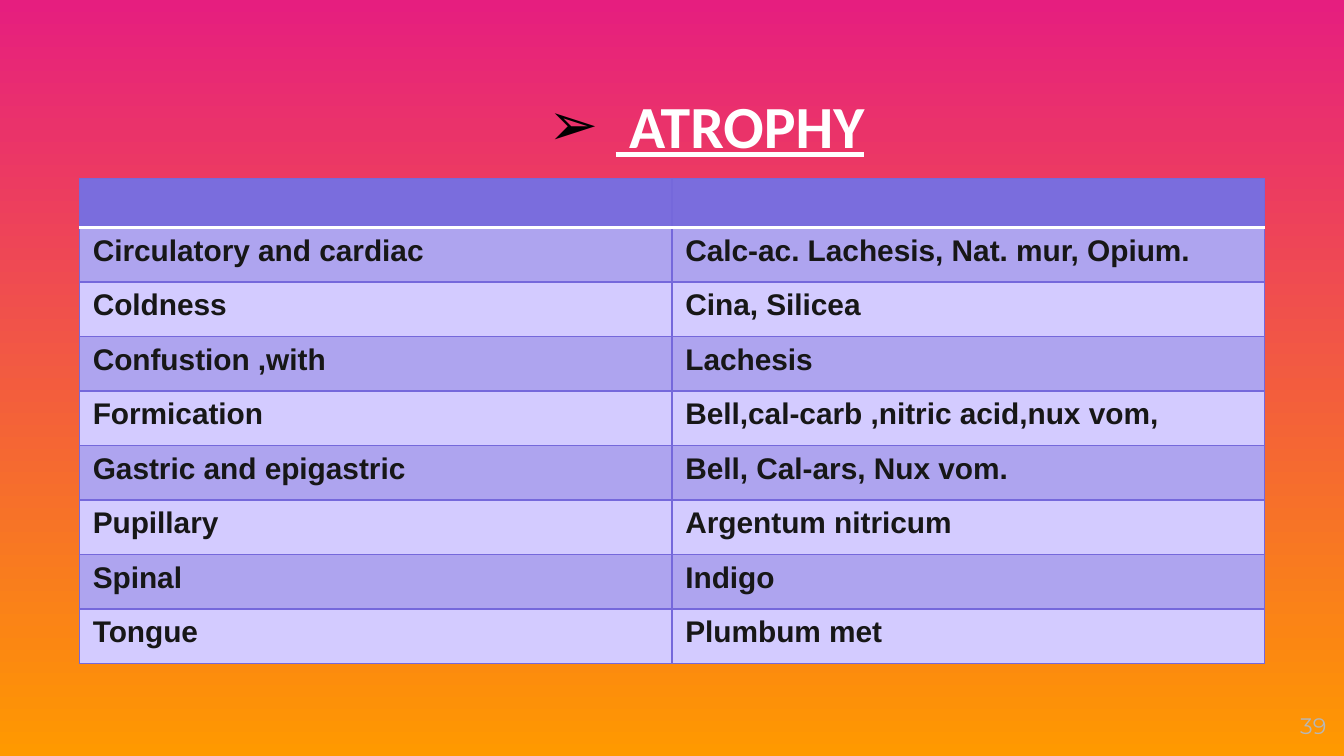
from lxml import etree
from pptx import Presentation
from pptx.dml.color import RGBColor
from pptx.enum import text
from pptx.oxml import ns
from pptx.util import Cm, Pt

PINK = RGBColor(0xE6, 0x1E, 0x7F)
ORANGE = RGBColor(0xFF, 0x99, 0x00)
WHITE = RGBColor(0xFF, 0xFF, 0xFF)
BLACK = RGBColor(0x00, 0x00, 0x00)
INK = RGBColor(0x17, 0x17, 0x17)
GREY = RGBColor(0xB7, 0xB7, 0xB7)
HEADER = RGBColor(0x7A, 0x6D, 0xDD)
BAND_DARK = RGBColor(0xAE, 0xA4, 0xEF)
BAND_LIGHT = RGBColor(0xD3, 0xCB, 0xFF)
GRID = RGBColor(0x75, 0x68, 0xDB)

REMEDIES = [
    ("Circulatory and cardiac", "Calc-ac. Lachesis, Nat. mur, Opium."),
    ("Coldness", "Cina, Silicea"),
    ("Confustion ,with", "Lachesis"),
    ("Formication", "Bell,cal-carb ,nitric acid,nux vom,"),
    ("Gastric and epigastric", "Bell, Cal-ars, Nux vom."),
    ("Pupillary", "Argentum nitricum"),
    ("Spinal", "Indigo"),
    ("Tongue", "Plumbum met"),
]


def add_child(parent, tag, **attributes):
    child = etree.SubElement(parent, ns.qn(tag))
    for name, value in attributes.items():
        child.set(name, str(value))
    return child


def format_font(font, name, size, color, bold=False):
    font.name = name
    font.size = Pt(size)
    font.color.rgb = color
    font.bold = bold


def paint_background(slide):
    fill = slide.background.fill
    fill.gradient()
    fill.gradient_angle = 270
    for stop, color in zip(fill.gradient_stops, (PINK, ORANGE)):
        stop.color.rgb = color


def add_title(slide, wording):
    title = slide.shapes.title
    title.left, title.top, title.width, title.height = Cm(10.11), Cm(1.55), Cm(6.63), Cm(1.63)
    frame = title.text_frame
    frame.text = wording
    frame.word_wrap = False
    frame.vertical_anchor = text.MSO_ANCHOR.TOP
    paragraph = frame.paragraphs[0]
    paragraph.alignment = text.PP_ALIGN.LEFT
    properties = paragraph._p.get_or_add_pPr()
    properties.set("marL", str(Cm(1.27)))
    properties.set("indent", str(Cm(-1.27)))
    add_child(add_child(properties, "a:buClr"), "a:srgbClr", val=BLACK)
    add_child(properties, "a:buFont", typeface="Arial")
    add_child(properties, "a:buChar", char="➢")
    font = paragraph.runs[0].font
    format_font(font, "Calibri", 32, WHITE, bold=True)
    font.underline = True


def set_borders(cell, **special):
    """Draw the grid line on each side, or the (colour, points) given for lnL, lnR, lnT or lnB."""
    properties = cell._tc.get_or_add_tcPr()
    for position, side in enumerate(("lnL", "lnR", "lnT", "lnB")):
        color, points = special.get(side, (GRID, 0.75))
        line = add_child(properties, f"a:{side}", w=Pt(points))
        add_child(add_child(line, "a:solidFill"), "a:srgbClr", val=color)
        properties.insert(position, line)


def fill_cell(cell, color):
    cell.fill.solid()
    cell.fill.fore_color.rgb = color


def add_remedy_table(slide):
    frame = slide.shapes.add_table(len(REMEDIES) + 1, 2, Cm(1.5), Cm(3.37), Cm(22.4), Cm(9.17))
    table = frame.table
    rule = (WHITE, 2)
    table.rows[0].height = Cm(0.93)
    for heading in table.rows[0].cells:
        fill_cell(heading, HEADER)
        set_borders(heading, lnB=rule)
        add_child(heading.text_frame.paragraphs[0]._p, "a:endParaRPr", sz=1400)
    for index, remedy in enumerate(REMEDIES):
        row = table.rows[index + 1]
        row.height = Cm(1.03)
        for cell, wording in zip(row.cells, remedy):
            cell.text = wording
            format_font(cell.text_frame.paragraphs[0].runs[0].font, "Arial", 16, INK, bold=True)
            fill_cell(cell, BAND_LIGHT if index % 2 else BAND_DARK)
            set_borders(cell, **({"lnT": rule} if index == 0 else {}))


def add_page_number(slide, number):
    frame = slide.shapes.add_textbox(Cm(23.55), Cm(13.18), Cm(1.52), Cm(1.09)).text_frame
    frame.margin_left = frame.margin_right = frame.margin_top = frame.margin_bottom = 0
    frame.word_wrap = True
    frame.vertical_anchor = text.MSO_ANCHOR.MIDDLE
    frame.text = number
    paragraph = frame.paragraphs[0]
    paragraph.alignment = text.PP_ALIGN.RIGHT
    format_font(paragraph.runs[0].font, "Montserrat", 12, GREY)


def main():
    presentation = Presentation()
    presentation.slide_width = Cm(25.4)
    presentation.slide_height = Cm(14.29)
    slide = presentation.slides.add_slide(presentation.slide_layouts[5])
    paint_background(slide)
    add_page_number(slide, "39")
    add_remedy_table(slide)
    add_title(slide, " ATROPHY")
    presentation.save("out.pptx")


if __name__ == "__main__":
    main()
